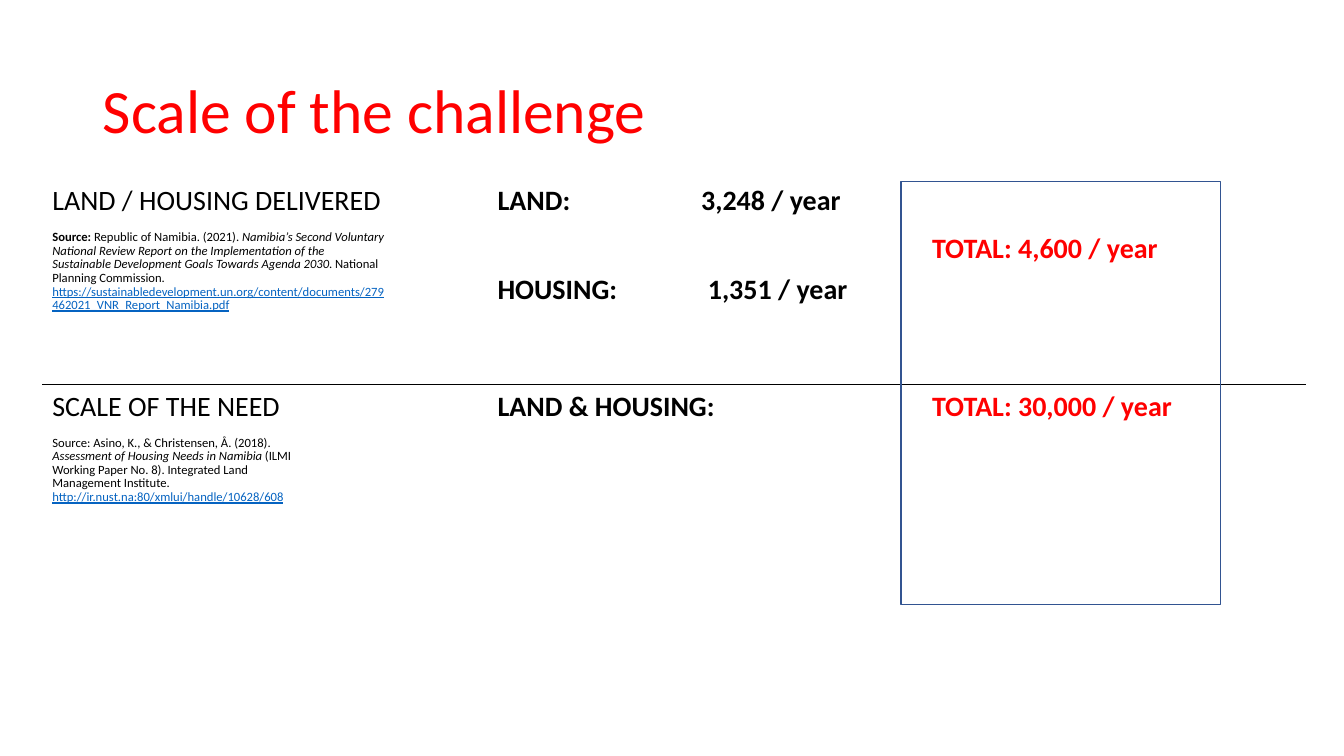
from lxml.etree import SubElement
from pptx import Presentation
from pptx.dml.color import RGBColor
from pptx.enum.shapes import MSO_CONNECTOR, MSO_SHAPE
from pptx.enum.text import MSO_ANCHOR
from pptx.oxml.ns import qn
from pptx.util import Cm, Pt

INK = {"black": "000000", "red": "FF0000", "link": "0563C1", "frame": "325491"}

deck = Presentation()
deck.slide_width, deck.slide_height = Cm(33.87), Cm(19.05)
slide = deck.slides.add_slide(deck.slide_layouts[6])


def add_box(left, top, width, height):
    box = slide.shapes.add_textbox(Cm(left), Cm(top), Cm(width), Cm(height))
    box.text_frame.word_wrap = True
    return box.text_frame


def add_runs(para, runs, size, gap=0):
    para.line_spacing = 0.9
    para.space_before = Pt(gap)
    for text, style in runs:
        run = para.add_run()
        run.text = text
        font = run.font
        font.name, font.size = "Calibri", Pt(size)
        font.bold = "bold" in style
        font.italic = "italic" in style
        font.underline = "link" in style
        tone = next((name for name in INK if name in style), "black")
        font.color.rgb = RGBColor.from_string(INK[tone])


title = add_box(2.34, 1.02, 29.21, 3.68)
title.vertical_anchor = MSO_ANCHOR.MIDDLE
add_runs(title.paragraphs[0], [("Scale of the challenge", "red")], 44)

TOP, LOW = 4.57, 9.75

sources = [
    (TOP, 8.89, "LAND / HOUSING DELIVERED", [
        ("Source: ", "bold"),
        ("Republic of Namibia. (2021). ", ""),
        ("Namibia’s Second Voluntary National Review Report on the Implementation "
         "of the Sustainable Development Goals Towards Agenda 2030", "italic"),
        (". National Planning Commission. ", ""),
        ("https://sustainabledevelopment.un.org/content/documents/"
         "279462021_VNR_Report_Namibia.pdf", "link"),
    ]),
    (LOW, 6.76, "SCALE OF THE NEED", [
        ("Source: Asino, K., & Christensen, Å. (2018). ", ""),
        ("Assessment of Housing Needs in Namibia", "italic"),
        (" (ILMI Working Paper No. 8). Integrated Land Management Institute. ", ""),
        ("http://ir.nust.na:80/xmlui/handle/10628/608", "link"),
    ]),
]
for top, width, head, runs in sources:
    frame = add_box(1.07, top, width, 4)
    add_runs(frame.paragraphs[0], [(head, "")], 20)
    add_runs(frame.add_paragraph(), runs, 9, 10)

supply = add_box(12.29, TOP, 9.93, 4.45)
rows = [("LAND:\t3,248 / year", 5.13, 0), ("HOUSING:\t1,351 / year", 5.3, 42)]
for i, (text, stop, gap) in enumerate(rows):
    para = supply.add_paragraph() if i else supply.paragraphs[0]
    add_runs(para, [(text, "bold")], 20, gap)
    tabs = SubElement(para._p.get_or_add_pPr(), qn("a:tabLst"))
    SubElement(tabs, qn("a:tab"), pos=str(Cm(stop)), algn="l")

labels = [
    (12.29, LOW, "LAND & HOUSING:", "bold"),
    (23.24, 5.78, "TOTAL: 4,600 / year", "bold red"),
    (23.24, LOW, "TOTAL: 30,000 / year", "bold red"),
]
for left, top, text, style in labels:
    frame = add_box(left, top, 6.76, 1.2)
    add_runs(frame.paragraphs[0], [(text, style)], 20)

rule = slide.shapes.add_connector(
    MSO_CONNECTOR.STRAIGHT, Cm(1.07), Cm(9.68), Cm(32.92), Cm(9.68))
rule.line.color.rgb = RGBColor.from_string(INK["black"])
rule.line.width = Pt(0.5)
SubElement(rule._element.spPr, qn("a:effectLst"))

frame = slide.shapes.add_shape(
    MSO_SHAPE.RECTANGLE, Cm(22.71), Cm(TOP), Cm(8.05), Cm(10.67))
frame.shadow.inherit = False
frame.fill.background()
frame.line.color.rgb = RGBColor.from_string(INK["frame"])
frame.line.width = Pt(1)

deck.save("out.pptx")
